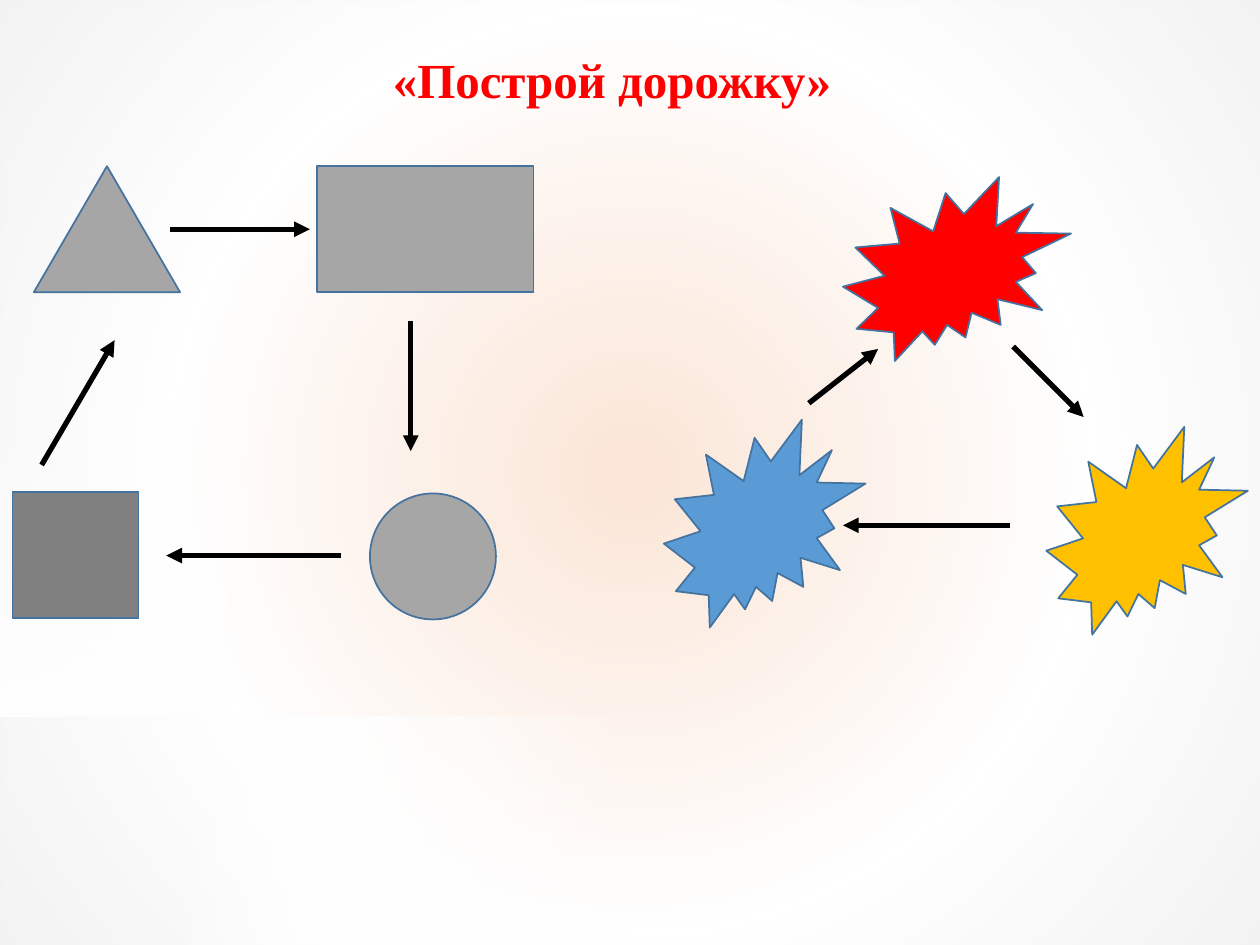
"""Build the "lay out a path" slide: two loops of figures joined by arrows."""
from dataclasses import dataclass

from lxml import etree
from pptx import Presentation
from pptx.dml.color import RGBColor
from pptx.enum.shapes import MSO_CONNECTOR, MSO_SHAPE
from pptx.oxml.ns import qn
from pptx.util import Pt

RECT = MSO_SHAPE.RECTANGLE
TRIANGLE = MSO_SHAPE.ISOSCELES_TRIANGLE
OVAL = MSO_SHAPE.OVAL
BURST = MSO_SHAPE.EXPLOSION2
STRAIGHT = MSO_CONNECTOR.STRAIGHT


@dataclass(frozen=True)
class Theme:
    """Hold the colours, font and sizes of the slide."""
    paper: str = "FBE5D6"
    white: str = "FFFFFF"
    edge: str = "F2F2F2"
    outline: str = "43739E"
    black: str = "000000"
    gray: str = "A6A6A6"
    dark_gray: str = "808080"
    red: str = "FF0000"
    blue: str = "5B9BD5"
    gold: str = "FFC000"
    font: str = "Times New Roman"
    title_size: int = 28
    outline_width: float = 1
    arrow_width: float = 3


def rgb(value):
    """Turn a hex string into a colour."""
    return RGBColor.from_string(value)


def write(tf, text, *, font, size, color, bold=False):
    """Put formatted text in the first paragraph of a frame."""
    r = tf.paragraphs[0].add_run()
    r.text = text
    r.font.name, r.font.size, r.font.bold = font, Pt(size), bold
    r.font.color.rgb = rgb(color)


class Board:
    """Draw styled elements on one slide."""

    def __init__(self, s, theme):
        """Keep the slide and theme, and colour the background."""
        self.s, self.theme = s, theme
        s.background.fill.solid()
        s.background.fill.fore_color.rgb = rgb(theme.paper)

    def shape(self, kind, x, y, w, h):
        """Add a preset shape without a shadow."""
        sp = self.s.shapes.add_shape(kind, Pt(x), Pt(y), Pt(w), Pt(h))
        sp.shadow.inherit = False
        return sp

    def figure(self, kind, x, y, w, h, color):
        """Add a filled and outlined figure."""
        sp = self.shape(kind, x, y, w, h)
        sp.fill.solid()
        sp.fill.fore_color.rgb = rgb(color)
        sp.line.color.rgb = rgb(self.theme.outline)
        sp.line.width = Pt(self.theme.outline_width)

    def glow(self, x, y, w, h, stops, rotation=0, radial=False):
        """Add a gradient rectangle from (position, colour, opacity) stops."""
        sp = self.shape(RECT, x, y, w, h)
        sp.rotation = rotation
        sp.line.fill.background()
        sp.fill.gradient()
        grad = sp._element.spPr.find(qn("a:gradFill"))
        for child in list(grad):
            grad.remove(child)
        grad.set("rotWithShape", "1")
        gs_list = etree.SubElement(grad, qn("a:gsLst"))
        for pos, color, opacity in stops:
            gs = etree.SubElement(gs_list, qn("a:gs"), pos=str(pos * 1000))
            clr = etree.SubElement(gs, qn("a:srgbClr"), val=color)
            etree.SubElement(clr, qn("a:alpha"), val=str(opacity * 1000))
        if radial:
            path = etree.SubElement(grad, qn("a:path"), path="circle")
            etree.SubElement(path, qn("a:fillToRect"),
                             {side: "50000" for side in "ltrb"})
        else:
            etree.SubElement(grad, qn("a:lin"), ang="10800000", scaled="0")

    def arrow(self, x1, y1, x2, y2):
        """Add a thick arrow that points at its second end."""
        c = self.s.shapes.add_connector(STRAIGHT, Pt(x1), Pt(y1), Pt(x2), Pt(y2))
        c.line.color.rgb = rgb(self.theme.black)
        c.line.width = Pt(self.theme.arrow_width)
        etree.SubElement(c.line._get_or_add_ln(), qn("a:tailEnd"), type="triangle")
        etree.SubElement(c._element.spPr, qn("a:effectLst"))

    def title(self, x, y, w, h, text):
        """Add the slide title."""
        t = self.theme
        tf = self.s.shapes.add_textbox(Pt(x), Pt(y), Pt(w), Pt(h)).text_frame
        tf.word_wrap = True
        write(tf, text, font=t.font, size=t.title_size, color=t.red, bold=True)


def main():
    """Build and save the slide."""
    prs = Presentation()
    prs.slide_width, prs.slide_height = Pt(720), Pt(540)
    t = Theme()
    b = Board(prs.slides.add_slide(prs.slide_layouts[6]), t)

    b.glow(0, 0, 720, 540, radial=True,
           stops=[(0, t.white, 0), (58, t.white, 100), (100, t.edge, 100)])
    fade = [(0, t.white, 100), (100, t.white, 0)]
    for x, y, w, h, rotation in [(92.2, 409.7, 92.2, 130.3, 0),
                                 (-23.8, 255.6, 177.8, 130.3, 90),
                                 (184.3, 409.7, 177.8, 130.3, 180)]:
        b.glow(x, y, w, h, fade, rotation)

    b.title(217.4, 24.5, 432.7, 41, "«Построй дорожку»")

    side = 72
    for kind, x, y, w, color in [(RECT, 7.2, 281.2, side, t.dark_gray),
                                 (TRIANGLE, 19.4, 95, 83.5, t.gray),
                                 (RECT, 181, 95, 124, t.gray),
                                 (OVAL, 211.4, 282, side, t.gray)]:
        b.figure(kind, x, y, w, side, color)
    for x, y, w, h, color in [(481.7, 101.2, 130.3, 105.1, t.red),
                              (379.4, 239.8, 115.2, 118.8, t.blue),
                              (597.9, 243.9, 115.2, 118.8, t.gold)]:
        b.figure(BURST, x, y, w, h, color)

    for ends in [(23.8, 265.7, 65.5, 194.4), (97.2, 131, 177.1, 131),
                 (234.7, 183.6, 234.7, 257.8), (195.1, 317.5, 95, 317.5),
                 (462.2, 230.4, 501.8, 199.4), (578.9, 198, 619.2, 238.3),
                 (577.4, 300.2, 481.7, 300.2)]:
        b.arrow(*ends)

    prs.save("out.pptx")


if __name__ == "__main__":
    main()
